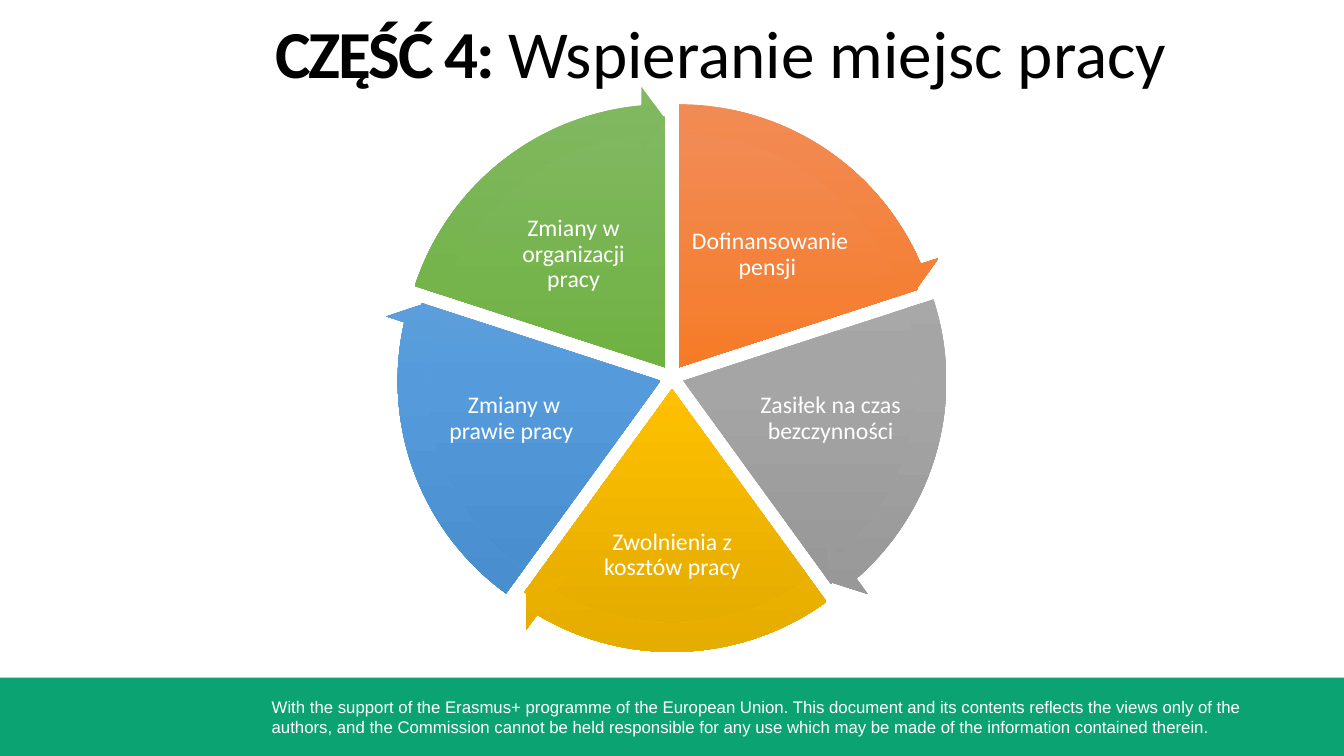
from copy import deepcopy
from math import cos, radians, sin

from pptx import Presentation
from pptx.dml.color import RGBColor
from pptx.enum.shapes import MSO_SHAPE as SHAPE
from pptx.enum.text import MSO_ANCHOR as ANCHOR, PP_ALIGN as ALIGN
from pptx.oxml.ns import qn
from pptx.util import Pt

COLORS = {
    "black": "000000",
    "white": "FFFFFF",
    "band": "0CA373",
    "orange": ("F18C57", "F67B28", "E56C19"),
    "gray": ("AFAFAF", "A5A5A5", "939393"),
    "yellow": ("FFC64B", "FFC000", "E3AB00"),
    "blue": ("71A6DB", "559BDB", "448ACA"),
    "green": ("81B861", "6FB242", "62A336"),
}
CENTER_X, CENTER_Y = 480, 269.3
EXPLOSION = 8.6
PIE_SIZE, ARROW_SIZE = 358.5, 402.5
FULL_TURN = 216
STEP = FULL_TURN / 5

SECTORS = [
    ("orange", "Dofinansowanie pensji ", (492.5, 143.3, 115.2, 77)),
    ("gray", "Zasiłek na czas bezczynności", (540, 256.3, 106.6, 85.7)),
    ("yellow", "Zwolnienia z kosztów pracy", (429.1, 349.9, 102.2, 93.6)),
    ("blue", "Zmiany w prawie pracy ", (313.9, 256.3, 106.6, 85.7)),
    ("green", "Zmiany w organizacji pracy", (352.1, 143.3, 115.2, 77)),
]

presentation = Presentation()
presentation.slide_width = Pt(960)
presentation.slide_height = Pt(540)
slide = presentation.slides.add_slide(presentation.slide_layouts[6])


def add_text(box, runs, size, font="Calibri", margins=None, spacing=None):
    textbox = slide.shapes.add_textbox(*map(Pt, box))
    frame = textbox.text_frame
    frame.word_wrap = True
    if margins:
        frame.margin_left, frame.margin_top, frame.margin_right, frame.margin_bottom = map(Pt, margins)
    paragraph = frame.paragraphs[0]
    if spacing:
        paragraph.line_spacing = spacing
    for text, color, bold in runs:
        run = paragraph.add_run()
        run.text = text
        run.font.name = font
        run.font.size = Pt(size)
        run.font.bold = bold
        run.font.color.rgb = RGBColor.from_string(COLORS[color])
    return frame


def add_sector_shape(kind, index, size, adjustments):
    angle = radians(STEP * 5 / 3 * (index - 0.75))
    left = CENTER_X + EXPLOSION * cos(angle) - size / 2
    top = CENTER_Y + EXPLOSION * sin(angle) - size / 2
    shape = slide.shapes.add_shape(kind, Pt(left), Pt(top), Pt(size), Pt(size))
    shape.shadow.inherit = False
    shape.line.fill.background()
    for position, value in enumerate(adjustments):
        shape.adjustments[position] = value
    shape.fill.gradient()
    shape.fill.gradient_angle = 270
    stop_list = shape._element.spPr.find(qn("a:gradFill")).find(qn("a:gsLst"))
    stop_list.append(deepcopy(stop_list[0]))
    shades = COLORS[SECTORS[index][0]]
    for stop, position, shade in zip(shape.fill.gradient_stops, (0, 0.5, 1), shades):
        stop.position = position
        stop.color.rgb = RGBColor.from_string(shade)


band = slide.shapes.add_shape(SHAPE.RECTANGLE, Pt(0), Pt(484), Pt(960), Pt(56))
band.shadow.inherit = False
band.fill.solid()
band.fill.fore_color.rgb = RGBColor.from_string(COLORS["band"])
band.line.fill.background()

disclaimer = (
    "With the support of the Erasmus+ programme of the European Union. "
    "This document and its contents reflects the views only of the authors, "
    "and the Commission cannot be held responsible for any use which may be "
    "made of the information contained therein."
)
add_text((187, 494, 750, 36), [(disclaimer, "white", False)], 12, "Arial")

title = add_text(
    (196.6, 13.7, 718.6, 54),
    [("CZĘŚĆ 4: ", "black", True), ("Wspieranie miejsc pracy", "black", False)],
    48, margins=(0, 1, 0, 0), spacing=0.9,
)
title.paragraphs[0].runs[0].font._element.set("spc", "-150")

starts = [(162 + STEP * index) % FULL_TURN for index in range(len(SECTORS))]

for index, (color, text, box) in enumerate(SECTORS):
    start = starts[index]
    add_sector_shape(SHAPE.PIE, index, PIE_SIZE, (start, (start + STEP) % FULL_TURN))
    label = add_text(box, [(text, "white", False)], 17, margins=(1.5,) * 4, spacing=0.9)
    label.vertical_anchor = ANCHOR.MIDDLE
    label.paragraphs[0].alignment = ALIGN.CENTER

for index, start in enumerate(starts):
    tip = (start + 39.93) % FULL_TURN
    add_sector_shape(SHAPE.CIRCULAR_ARROW, index, ARROW_SIZE, (0.051, 3.275, tip, start, 0.059))

presentation.save("out.pptx")
